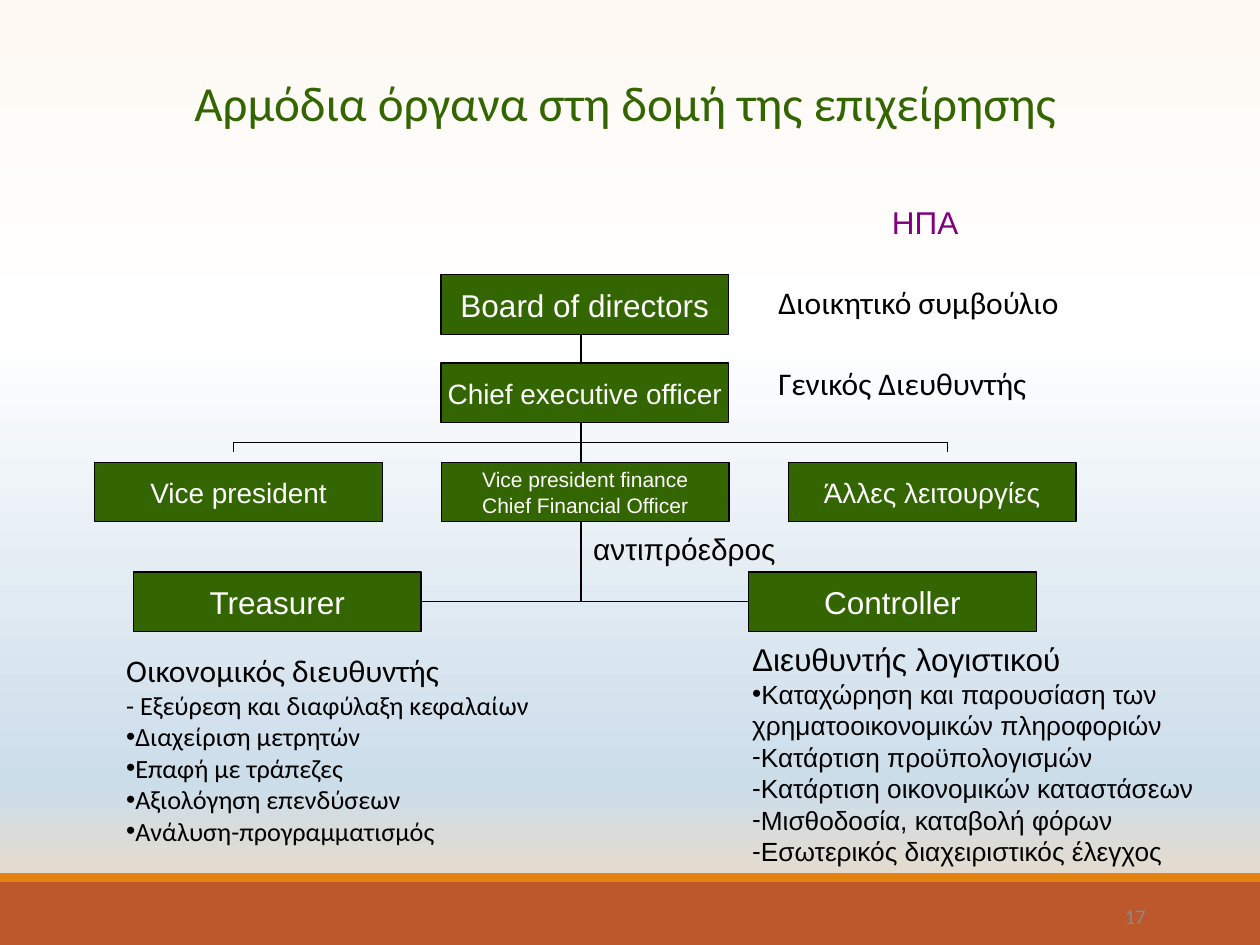
import pptx
import pptx.util
import pptx.dml.color
import pptx.enum.shapes
import pptx.enum.text
import pptx.oxml
import pptx.oxml.ns

Cm = pptx.util.Cm
RGB = pptx.dml.color.RGBColor
ALIGN = pptx.enum.text.PP_ALIGN
ANCHOR = pptx.enum.text.MSO_ANCHOR
RECT = pptx.enum.shapes.MSO_SHAPE.RECTANGLE
LINE = pptx.enum.shapes.MSO_CONNECTOR.STRAIGHT

GREEN = RGB(0x33, 0x66, 0x00)
BLACK = RGB(0, 0, 0)
WHITE = RGB(0xFF, 0xFF, 0xFF)
PURPLE = RGB(0x80, 0x00, 0x80)
GREY = RGB(0x89, 0x89, 0x89)
RUST = RGB(0xBD, 0x58, 0x2C)
AMBER = RGB(0xE4, 0x83, 0x12)
SKY = [(0, RGB(0xFE, 0xF9, 0xF3)), (35, WHITE),
       (83, RGB(0xCC, 0xDD, 0xEA)), (100, RGB(0xF9, 0xDA, 0xB6))]

NODE_W, NODE_H = 5.8, 1.2

LEFT = [("", "Οικονομικός διευθυντής"),
        ("", "- Εξεύρεση και διαφύλαξη κεφαλαίων"),
        ("•", "Διαχείριση μετρητών"),
        ("•", "Επαφή με τράπεζες"),
        ("•", "Αξιολόγηση επενδύσεων"),
        ("•", "Ανάλυση-προγραμματισμός")]
RIGHT = [("", "Διευθυντής λογιστικού"),
         ("•", "Καταχώρηση και παρουσίαση των"),
         ("", "χρηματοοικονομικών πληροφοριών"),
         ("-", "Κατάρτιση προϋπολογισμών"),
         ("-", "Κατάρτιση οικονομικών καταστάσεων"),
         ("-", "Μισθοδοσία, καταβολή φόρων"),
         ("-", "Εσωτερικός διαχειριστικός έλεγχος")]


def put(shape, rows, size=18, rest=None, font="Arial", color=BLACK,
        align=ALIGN.LEFT, anchor=ANCHOR.TOP, wrap=False):
    """Write (bullet, text) rows into a shape; rest is the size after row one."""
    frame = shape.text_frame
    frame.auto_size = pptx.enum.text.MSO_AUTO_SIZE.NONE
    frame.word_wrap = wrap
    frame.vertical_anchor = anchor
    frame.text = "\n".join(text for _, text in rows)
    for i, (para, (mark, _)) in enumerate(zip(frame.paragraphs, rows)):
        props = para._p.get_or_add_pPr()
        props.set("marL", "0")
        props.set("indent", "0")
        tag = "a:buChar" if mark else "a:buNone"
        item = pptx.oxml.ns.qn(tag)
        bullet = props.makeelement(item, {"char": mark} if mark else {})
        props.append(bullet)
        para.alignment = align
        para.line_spacing = 1.0
        para.space_before = para.space_after = pptx.util.Pt(0)
        for run in para.runs:
            run.font.size = pptx.util.Pt(rest if rest and i else size)
            run.font.name = font
            run.font.color.rgb = color


def place(shape, box):
    """Move a shape to a box given in centimetres."""
    shape.left, shape.top, shape.width, shape.height = map(Cm, box)


def rect(slide, box, color):
    """Add a plain filled rectangle."""
    shape = slide.shapes.add_shape(RECT, *map(Cm, box))
    shape.shadow.inherit = False
    shape.fill.solid()
    shape.fill.fore_color.rgb = color
    shape.line.fill.background()
    return shape


def label(slide, box, text, **form):
    """Add a one-line text box."""
    put(slide.shapes.add_textbox(*map(Cm, box)), [("", text)], **form)


def link(slide, *ends):
    """Add a thin black line between two points."""
    line = slide.shapes.add_connector(LINE, *map(Cm, ends))
    line.line.color.rgb = BLACK
    line.line.width = pptx.util.Pt(0.75)
    props = line._element.spPr
    props.append(props.makeelement(pptx.oxml.ns.qn("a:effectLst"), {}))


def node(slide, x, y, text, size):
    """Add a green box of the chart."""
    shape = rect(slide, (x, y, NODE_W, NODE_H), GREEN)
    shape.line.color.rgb = BLACK
    shape.line.width = pptx.util.Pt(0.75)
    put(shape, [("", row) for row in text.split("\n")], size=size,
        color=WHITE, align=ALIGN.CENTER, anchor=ANCHOR.MIDDLE)


def sky(slide):
    """Give the slide its four-stop gradient background."""
    fill = slide.background.fill
    fill.gradient()
    fill.gradient_angle = 270
    stops = fill._fill._gradFill.find(pptx.oxml.ns.qn("a:gsLst"))
    for stop in list(stops):
        stops.remove(stop)
    space = pptx.oxml.ns.nsdecls("a")
    for pos, color in SKY:
        stops.append(pptx.oxml.parse_xml(
            f'<a:gs {space} pos="{pos * 1000}"><a:srgbClr val="{color}"/></a:gs>'))


def foot(slide, box):
    """Draw the footer bars and the page number."""
    x, y, w, h = box
    rect(slide, (x, y + 0.18, w, h - 0.18), RUST)
    rect(slide, (x, y, w, 0.18), AMBER)
    label(slide, (x + 21.3, y + 0.5, 2.05, 0.75), "17", size=12,
          font="Calibri", color=GREY, align=ALIGN.RIGHT, anchor=ANCHOR.MIDDLE,
          wrap=True)


def chart(slide, box):
    """Draw the organisation chart with its Greek labels."""
    x, y, w, h = box
    mid, stem, step = x + 6.98, x + 9.8, 6.99
    chief, row, low = y + 1.78, y + 3.78, y + h - NODE_H
    bus, base = row - 0.4, low + NODE_H / 2
    west, east = x + 0.78, x + 13.18
    for top, end in [(y + NODE_H, chief), (chief + NODE_H, row),
                     (row + NODE_H, base)]:
        link(slide, stem, top, stem, end)
    ends = x + 2.79, x + 17.19
    link(slide, ends[0], bus, ends[1], bus)
    for end in ends:
        link(slide, end, bus, end, bus + 0.2)
    link(slide, west + NODE_W, base, east, base)

    node(slide, mid, y, "Board of directors", 18)
    node(slide, mid, chief, "Chief executive officer", 16)
    peers = [("Vice president", 16),
             ("Vice president finance\nChief Financial Officer", 12),
             ("Άλλες λειτουργίες", 16)]
    for i, (text, size) in enumerate(peers):
        node(slide, x + i * step, row, text, size)
    node(slide, west, low, "Treasurer", 18)
    node(slide, east, low, "Controller", 18)

    side = x + 13.53
    label(slide, (side, y + 0.05, 6.43, 1.02), "Διοικητικό συμβούλιο",
          font="Calibri")
    label(slide, (side, y + 1.67, 5.84, 1.02), "Γενικός Διευθυντής",
          font="Calibri")
    label(slide, (stem, row + 1.25, 4.19, 0.97), "αντιπρόεδρος", size=17)
    label(slide, (x + 15.82, y - 1.58, 1.85, 1.02), "ΗΠΑ", color=PURPLE)


def duty(shape, box, rows, font):
    """Fill a body placeholder with a role and its duties."""
    place(shape, box)
    put(shape, rows, rest=15, font=font)


def head(shape, box, text):
    """Fill the title placeholder."""
    place(shape, box)
    put(shape, [("", text)], size=28, font="Calibri", color=GREEN,
        align=ALIGN.CENTER, anchor=ANCHOR.BOTTOM, wrap=True)


def main():
    """Build the slide and save it."""
    deck = pptx.Presentation()
    deck.slide_width, deck.slide_height = Cm(25.4), Cm(19.05)
    slide = deck.slides.add_slide(deck.slide_layouts[3])
    sky(slide)
    foot(slide, (0, 17.6, 25.4, 1.45))
    head(slide.shapes.title, (0.9, 0.97, 23.4, 1.8),
         "Αρμόδια όργανα στη δομή της επιχείρησης")
    chart(slide, (1.91, 5.54, 19.8, 7.19))
    duty(slide.placeholders[1], (2.29, 13, 9.07, 4.19), LEFT, "Calibri")
    duty(slide.placeholders[2], (14.91, 12.78, 9.45, 4.83), RIGHT, "Arial")
    deck.save("out.pptx")


if __name__ == "__main__":
    main()
